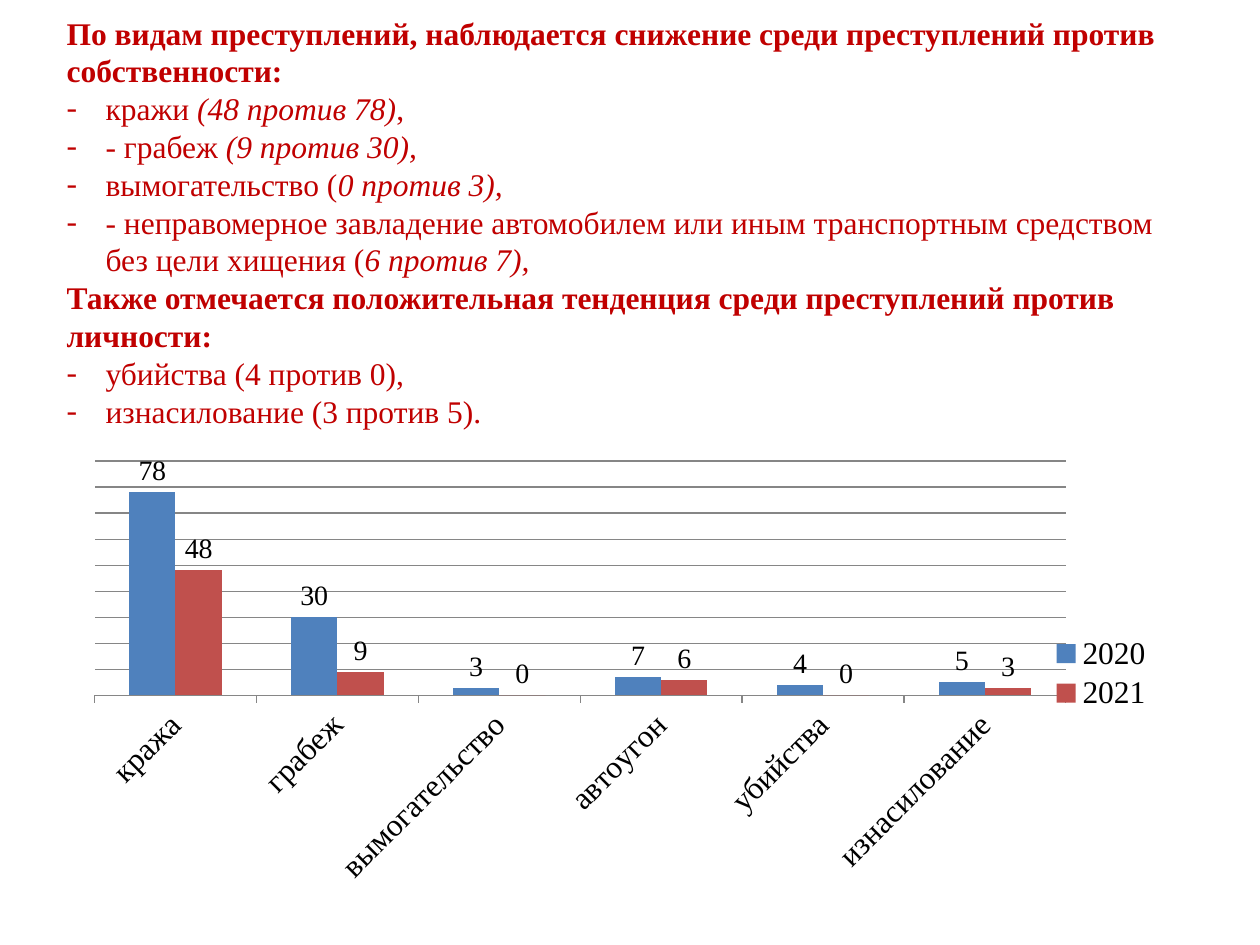
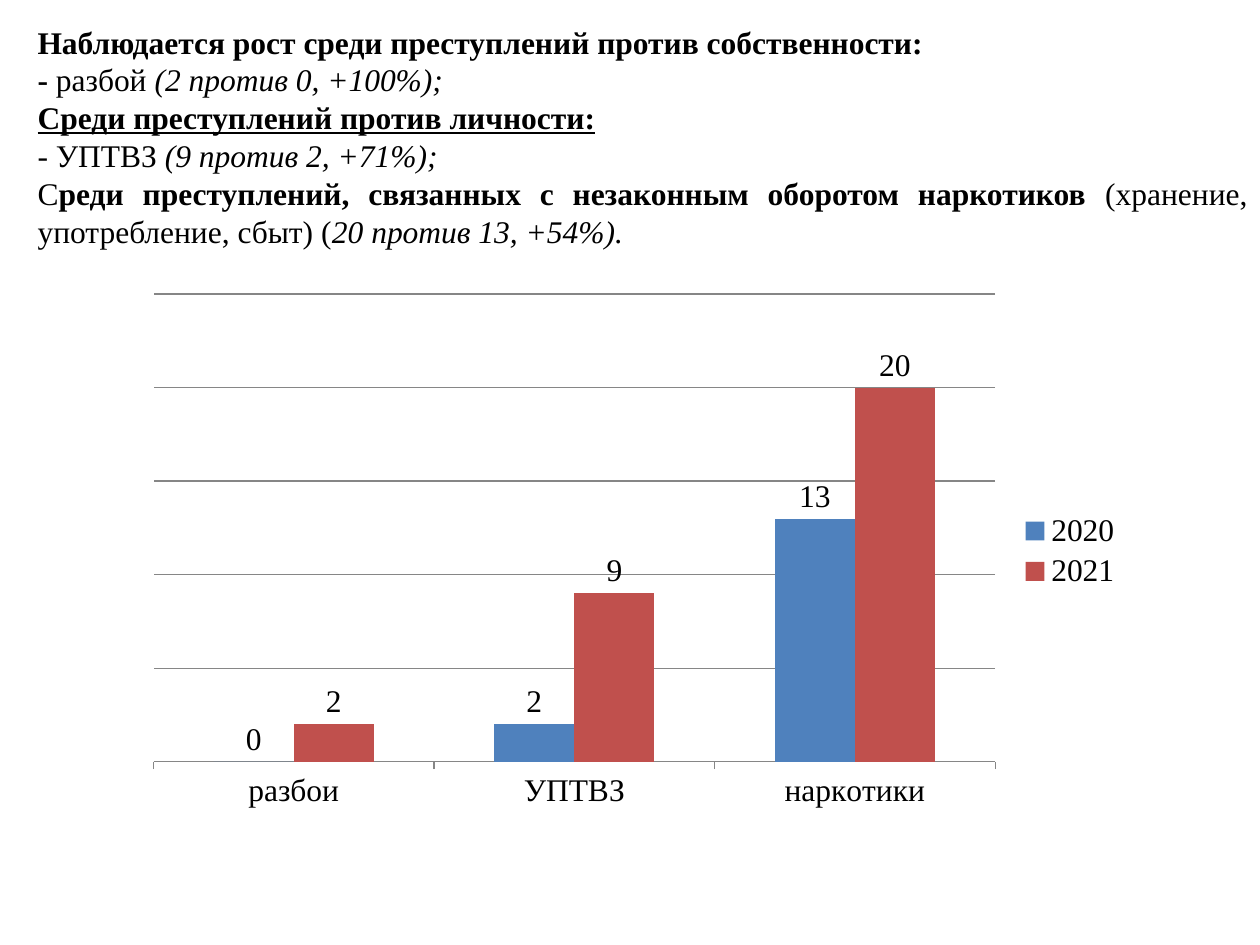
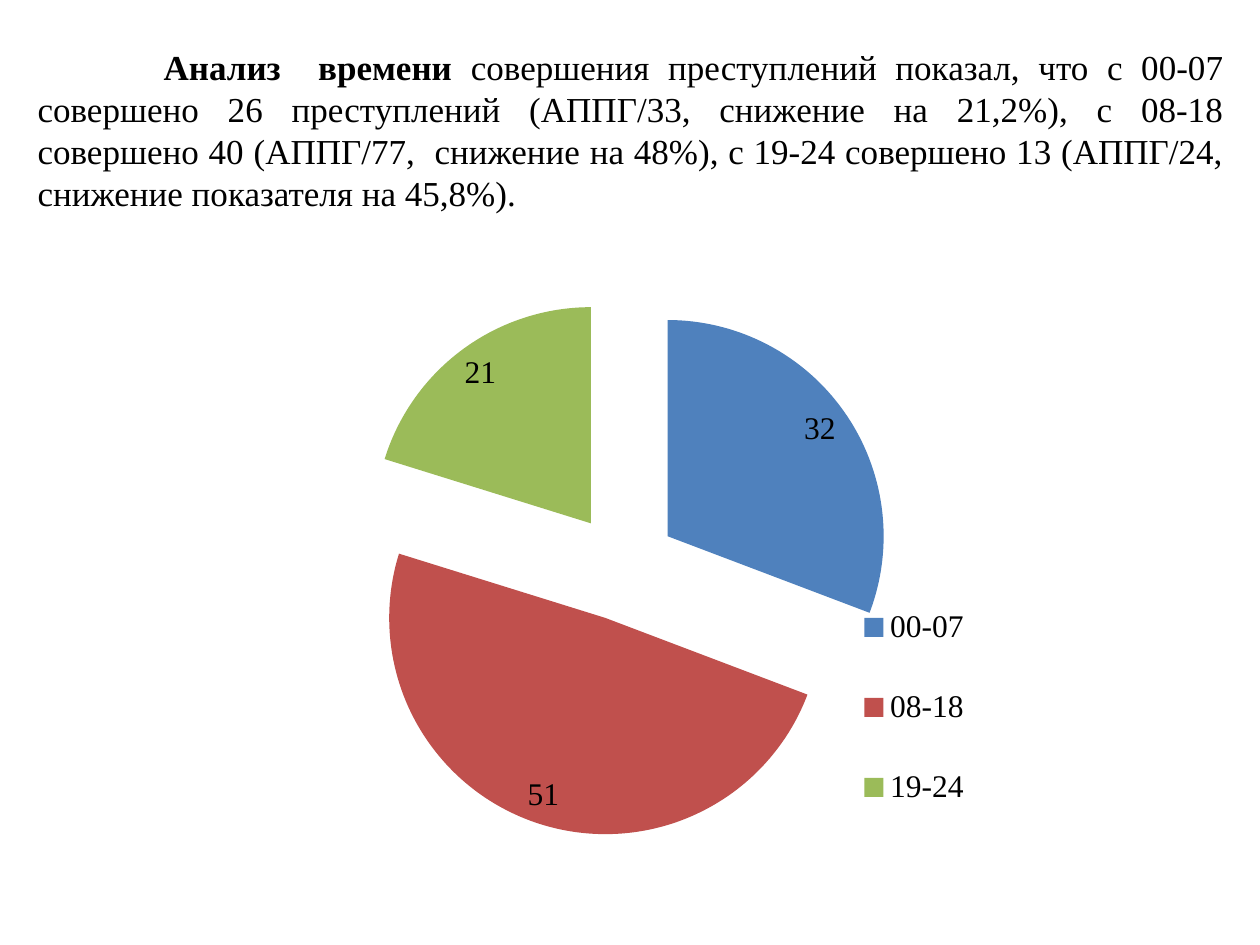
from dataclasses import dataclass
from typing import Any, Optional

import lxml.etree
import pptx
import pptx.chart.data
import pptx.dml.color
import pptx.enum.chart
import pptx.enum.text
import pptx.oxml.ns
import pptx.util

Inches = pptx.util.Inches
Pt = pptx.util.Pt
qn = pptx.oxml.ns.qn

FONT = "Times New Roman"
BLACK, RED, GRID = "000000", "C00000", "868686"
SERIES_COLORS = ("4F81BD", "C0504D", "9BBB59")
HANG = 0.31


@dataclass(frozen=True)
class Frame:
    left: float
    top: float
    width: float
    height: float

    def lengths(self) -> tuple:
        return tuple(Inches(side) for side in (self.left, self.top, self.width, self.height))


@dataclass(frozen=True)
class Span:
    text: str
    bold: bool = False
    italic: bool = False
    underline: bool = False


@dataclass(frozen=True)
class Para:
    spans: tuple[Span, ...]
    bullet: bool = False
    justified: bool = False
    first_indent: float = 0


@dataclass(frozen=True)
class TextBlock:
    frame: Frame
    paras: tuple[Para, ...]
    size: int = 18
    color: str = BLACK


@dataclass(frozen=True)
class ChartBlock:
    frame: Frame
    categories: tuple[str, ...]
    series: dict[str, tuple[int, ...]]
    label_size: int = 18
    plot: Optional[Frame] = None
    legend: Optional[Frame] = None


@dataclass(frozen=True)
class ColumnScale:
    maximum: int
    step: int
    label_angle: int = 0


def rgb(color: str) -> pptx.dml.color.RGBColor:
    return pptx.dml.color.RGBColor.from_string(color)


def style_font(font: Any, size: int, color: str = BLACK) -> None:
    font.name = FONT
    font.size = Pt(size)
    font.color.rgb = rgb(color)


def add_para(para: Any, content: Para, block: TextBlock) -> None:
    if content.justified:
        para.alignment = pptx.enum.text.PP_ALIGN.JUSTIFY
    properties = para._p.get_or_add_pPr()
    if content.first_indent:
        properties.set("indent", str(Inches(content.first_indent)))
    if content.bullet:
        properties.set("marL", str(Inches(HANG)))
        properties.set("indent", str(Inches(-HANG)))
        lxml.etree.SubElement(properties, qn("a:buFont")).set("typeface", FONT)
        lxml.etree.SubElement(properties, qn("a:buChar")).set("char", "-")
    for span in content.spans:
        run = para.add_run()
        run.text = span.text
        style_font(run.font, block.size, block.color)
        run.font.bold = span.bold
        run.font.italic = span.italic
        run.font.underline = span.underline


def add_text(page: Any, block: TextBlock) -> None:
    box = page.shapes.add_textbox(*block.frame.lengths())
    text_frame = box.text_frame
    text_frame.word_wrap = True
    text_frame.auto_size = pptx.enum.text.MSO_AUTO_SIZE.SHAPE_TO_FIT_TEXT
    for index, content in enumerate(block.paras):
        para = text_frame.add_paragraph() if index else text_frame.paragraphs[0]
        add_para(para, content, block)


def manual_layout(part: Frame, chart: Frame, inner: bool) -> Any:
    layout = lxml.etree.Element(qn("c:layout"))
    manual = lxml.etree.SubElement(layout, qn("c:manualLayout"))
    settings = [("layoutTarget", "inner")] if inner else []
    settings += [("xMode", "edge"), ("yMode", "edge"),
                 ("x", part.left / chart.width), ("y", part.top / chart.height),
                 ("w", part.width / chart.width), ("h", part.height / chart.height)]
    for name, value in settings:
        lxml.etree.SubElement(manual, qn(f"c:{name}")).set("val", str(value))
    return layout


def drop_layout(parent: Any) -> None:
    for layout in parent.findall(qn("c:layout")):
        parent.remove(layout)


def add_chart(page: Any, block: ChartBlock, kind: Any, label_position: Any) -> Any:
    chart_data = pptx.chart.data.CategoryChartData()
    chart_data.categories = block.categories
    for name, values in block.series.items():
        chart_data.add_series(name, values)
    chart = page.shapes.add_chart(kind, *block.frame.lengths(), chart_data).chart
    chart.has_title = False
    style_font(chart.font, 18)

    chart.has_legend = True
    legend = chart.legend
    legend.position = pptx.enum.chart.XL_LEGEND_POSITION.RIGHT
    legend.include_in_layout = False
    style_font(legend.font, 18)
    if block.legend:
        drop_layout(legend._element)
        position = legend._element.find(qn("c:legendPos"))
        position.addnext(manual_layout(block.legend, block.frame, inner=False))
    if block.plot:
        plot_area = chart._chartSpace.chart.plotArea
        drop_layout(plot_area)
        plot_area.insert(0, manual_layout(block.plot, block.frame, inner=True))

    plot = chart.plots[0]
    plot.has_data_labels = True
    labels = plot.data_labels
    labels.show_value = True
    labels.position = label_position
    style_font(labels.font, block.label_size)
    return chart


def add_columns(page: Any, block: ChartBlock, scale: ColumnScale) -> None:
    chart = add_chart(page, block, pptx.enum.chart.XL_CHART_TYPE.COLUMN_CLUSTERED,
                      pptx.enum.chart.XL_LABEL_POSITION.OUTSIDE_END)
    plot = chart.plots[0]
    plot.gap_width = 150
    plot.overlap = 0
    plot.vary_by_categories = False
    for series, color in zip(plot.series, SERIES_COLORS):
        series.invert_if_negative = False
        series.format.fill.solid()
        series.format.fill.fore_color.rgb = rgb(color)

    values = chart.value_axis
    values.minimum_scale = 0
    values.maximum_scale = scale.maximum
    values.major_unit = scale.step
    values.visible = False
    values.has_major_gridlines = True
    categories = chart.category_axis
    categories.major_tick_mark = pptx.enum.chart.XL_TICK_MARK.OUTSIDE
    style_font(categories.tick_labels.font, 18)
    for line in (values.major_gridlines.format.line, categories.format.line):
        line.color.rgb = rgb(GRID)
        line.width = Pt(0.75)
    if scale.label_angle:
        body = categories._element.find(qn("c:txPr")).find(qn("a:bodyPr"))
        body.set("rot", str(scale.label_angle * 60000))
        body.set("vert", "horz")


def add_pie(page: Any, block: ChartBlock, explosion: int) -> None:
    chart = add_chart(page, block, pptx.enum.chart.XL_CHART_TYPE.PIE,
                      pptx.enum.chart.XL_LABEL_POSITION.BEST_FIT)
    plot = chart.plots[0]
    plot.vary_by_categories = True
    series = plot.series[0]
    for index, color in enumerate(SERIES_COLORS):
        fill = series.points[index].format.fill
        fill.solid()
        fill.fore_color.rgb = rgb(color)
    exploded = lxml.etree.Element(qn("c:explosion"))
    exploded.set("val", str(explosion))
    series._element.find(qn("c:dPt")).addprevious(exploded)


def heading(text: str, underline: bool = False) -> Para:
    return Para((Span(text, bold=True, underline=underline),))


def item(text: str, figures: str = "", ending: str = "") -> Para:
    parts = (Span(text), Span(figures, italic=True), Span(ending))
    return Para(tuple(part for part in parts if part.text), bullet=True)


DECREASE_TEXT = TextBlock(
    Frame(0.43, 0.06, 9.21, 3.43),
    (
        heading("По видам преступлений, наблюдается снижение среди преступлений против собственности:"),
        item("кражи ", "(48 против 78)", ","),
        item("- грабеж ", "(9 против 30),"),
        item("вымогательство (", "0 против 3),"),
        item("- неправомерное завладение автомобилем или иным транспортным средством "
             "без цели хищения (", "6 против 7),"),
        heading("Также отмечается положительная тенденция среди преступлений против личности:"),
        item("убийства (4 против 0),"),
        item("изнасилование (3 против 5)."),
    ),
    color=RED,
)
DECREASE_CHART = ChartBlock(
    Frame(0.67, 3.51, 8.58, 3.66),
    ("кража", "грабеж", "вымогательство", "автоугон", "убийства", "изнасилование"),
    {"2020": (78, 30, 3, 7, 4, 5), "2021": (48, 9, 0, 6, 0, 3)},
    label_size=16,
    plot=Frame(0.08, 0.15, 7.71, 1.86),
    legend=Frame(7.6, 1.5, 0.94, 0.67),
)

GROWTH_TEXT = TextBlock(
    Frame(0.2, 0.13, 9.8, 1.92),
    (
        heading("Наблюдается рост среди преступлений против собственности:"),
        Para((Span("- ", bold=True), Span("разбой "), Span("(2 против 0, +100%);", italic=True))),
        heading("Среди преступлений против личности:", underline=True),
        Para((Span("- УПТВЗ "), Span("(9 против 2, +71%);", italic=True))),
        Para((
            Span("С"),
            Span("реди преступлений, связанных с незаконным оборотом наркотиков ", bold=True),
            Span("(хранение, употребление, сбыт) ("),
            Span("20 против 13, +54%).", italic=True),
        ), justified=True),
    ),
)
GROWTH_CHART = ChartBlock(
    Frame(1.06, 2.25, 7.95, 4.25),
    ("разбои", "УПТВЗ", "наркотики"),
    {"2020": (0, 2, 13), "2021": (2, 9, 20), "Ряд 3": ()},
)

TIME_TEXT = TextBlock(
    Frame(0.2, 0.31, 9.61, 1.45),
    (Para((
        Span("Анализ  времени", bold=True),
        Span(" совершения преступлений показал, что с 00-07 совершено 26 преступлений "
             "(АППГ/33, снижение на 21,2%), с 08-18 совершено 40 (АППГ/77,  снижение на 48%), "
             "с 19-24 совершено 13 (АППГ/24, снижение показателя на 45,8%)."),
    ), justified=True, first_indent=1),),
    size=20,
)
TIME_CHART = ChartBlock(
    Frame(2.72, 2.02, 5.35, 4.88),
    ("00-07", "08-18", "19-24"),
    {"Series 1": (32, 51, 21)},
    plot=Frame(0.08, 0.27, 4.29, 4.42),
    legend=Frame(4, 2.46, 1.07, 2.27),
)


def main() -> None:
    deck = pptx.Presentation()
    deck.slide_width = Inches(10)
    deck.slide_height = Inches(7.5)
    blank = deck.slide_layouts[6]
    decrease, growth, time = (deck.slides.add_slide(blank) for _ in range(3))

    add_text(decrease, DECREASE_TEXT)
    add_columns(decrease, DECREASE_CHART, ColumnScale(90, 10, label_angle=-45))
    add_text(growth, GROWTH_TEXT)
    add_columns(growth, GROWTH_CHART, ColumnScale(25, 5))
    add_text(time, TIME_TEXT)
    add_pie(time, TIME_CHART, explosion=25)

    deck.save("out.pptx")


if __name__ == "__main__":
    main()
